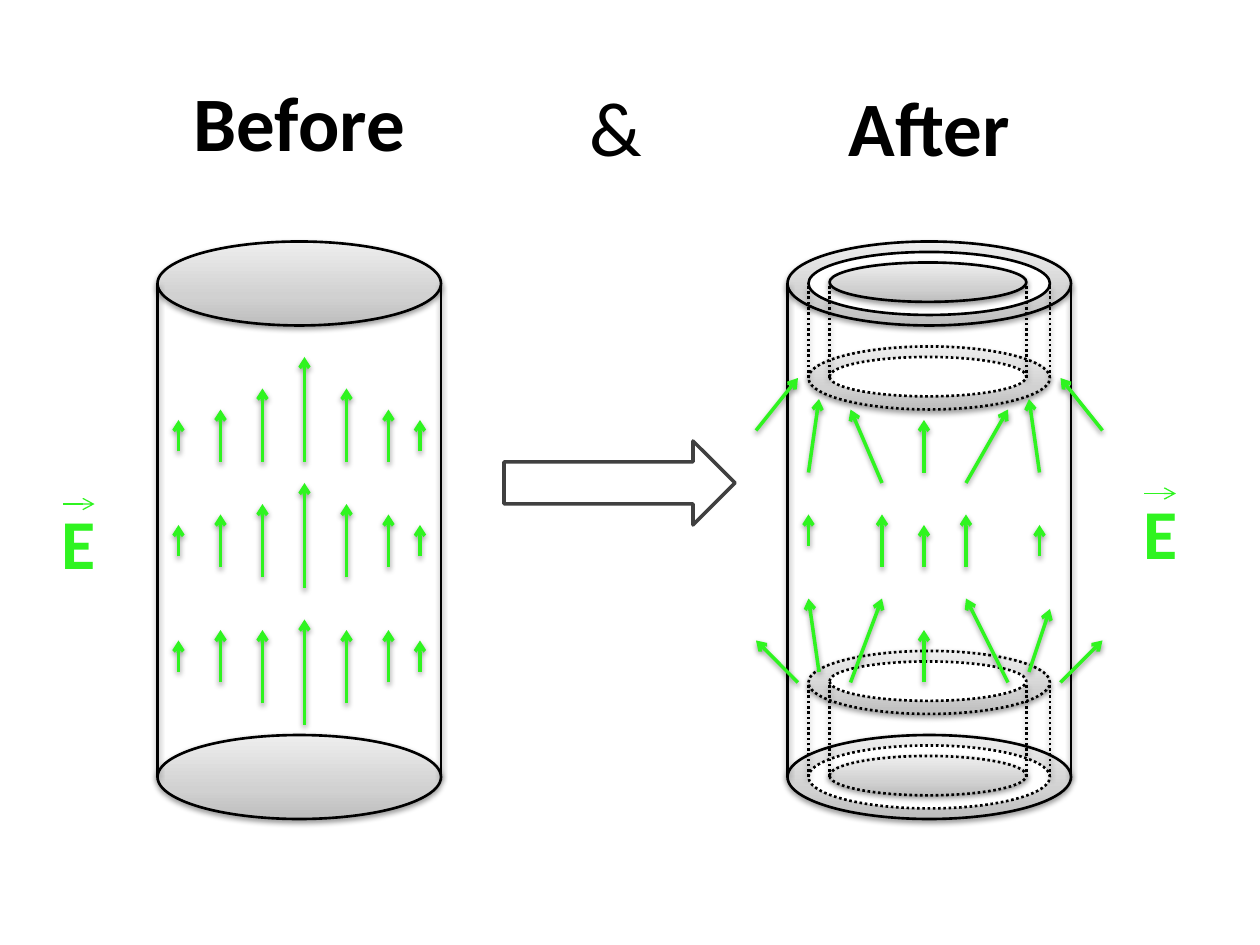
from lxml import etree
from pptx import Presentation
from pptx.dml.color import RGBColor
from pptx.enum import dml, shapes, text
from pptx.oxml.ns import qn
from pptx.util import Pt

BLACK, WHITE, GREEN, GREY = "000000", "FFFFFF", "2FF420", "404040"
METAL = ((0, "BDBDBD"), (35000, "D1D1D1"), (100000, "EEEEEE"))
CAP_HEIGHT = 48


def rgb(value):
    """Turn a hex string into a colour."""
    return RGBColor.from_string(value)


def set_effect(item, shadow):
    """Give an item a soft shadow below it, or no effect at all."""
    effects = etree.SubElement(item._element.spPr, qn("a:effectLst"))
    if shadow:
        cast = etree.SubElement(effects, qn("a:outerShdw"), blurRad="40000",
                                dist="20000", dir="5400000", rotWithShape="0")
        tint = etree.SubElement(cast, qn("a:srgbClr"), val=BLACK)
        etree.SubElement(tint, qn("a:alpha"), val="38000")


def set_line(item, color, width, dotted=False):
    """Set the stroke of a shape or connector."""
    item.line.color.rgb = rgb(color)
    item.line.width = Pt(width)
    if dotted:
        item.line.dash_style = dml.MSO_LINE.ROUND_DOT


def add_line(slide, start, end, color=BLACK, width=1.5, dotted=False,
             arrow=False, shadow=True):
    """Draw a straight line, with an arrowhead at its end if asked."""
    line = slide.shapes.add_connector(
        shapes.MSO_CONNECTOR.STRAIGHT, *(Pt(v) for v in (*start, *end)))
    set_line(line, color, width, dotted)
    if arrow:
        etree.SubElement(line.line._get_or_add_ln(), qn("a:tailEnd"), type="arrow")
    set_effect(line, shadow)


def add_ellipse(slide, box, metal=True, dotted=False):
    """Draw an ellipse of shaded metal or of plain white."""
    ellipse = slide.shapes.add_shape(shapes.MSO_SHAPE.OVAL, *(Pt(v) for v in box))
    if metal:
        ellipse.fill.gradient()
        ellipse.fill.gradient_angle = 90
        stops = ellipse._element.spPr.find(qn("a:gradFill")).find(qn("a:gsLst"))
        for stop in list(stops):
            stops.remove(stop)
        for position, color in METAL:
            stop = etree.SubElement(stops, qn("a:gs"), pos=str(position))
            etree.SubElement(stop, qn("a:srgbClr"), val=color)
    else:
        ellipse.fill.solid()
        ellipse.fill.fore_color.rgb = rgb(WHITE)
    set_line(ellipse, BLACK, 1.5, dotted)
    set_effect(ellipse, shadow=metal)


def add_label(slide, box, words, size=44, color=BLACK, bold=True, middle=False,
              align=text.PP_ALIGN.CENTER):
    """Place one line of text in a box."""
    frame = slide.shapes.add_textbox(*(Pt(v) for v in box)).text_frame
    frame.word_wrap = True
    frame.vertical_anchor = text.MSO_ANCHOR.MIDDLE if middle else text.MSO_ANCHOR.TOP
    paragraph = frame.paragraphs[0]
    paragraph.text = words
    paragraph.alignment = align
    font = paragraph.font
    font.name, font.size, font.bold = "Calibri", Pt(size), bold
    font.color.rgb = rgb(color)


def add_cylinder(slide, left, top, width, height):
    """Draw the two caps and the two sides of a cylinder."""
    for cap_top in (top, top + height - CAP_HEIGHT):
        add_ellipse(slide, (left, cap_top, width, CAP_HEIGHT))
    for x in (left, left + width):
        add_line(slide, (x, top + CAP_HEIGHT / 2), (x, top + height - CAP_HEIGHT / 2))


def add_groove(slide, left, top, rings):
    """Draw a ring-shaped groove from (offset, metal outside, dotted) rings."""
    for offset, metal, dotted in rings:
        add_ellipse(slide, (left + 12, top + offset, 138, 36), metal, dotted)
        add_ellipse(slide, (left + 24, top + offset + 6, 112.5, 22.5), not metal, dotted)
    upper, lower = (top + offset + 18 for offset, _, _ in rings)
    for x in (12, 150, 24, 136.5):
        add_line(slide, (left + x, lower), (left + x, upper), dotted=True)


def add_field(slide, left, top, arrows):
    """Draw field arrows, each given as x and y of its tail and its tip."""
    for x1, y1, x2, y2 in arrows:
        add_line(slide, (left + x1, top + y1), (left + x2, top + y2),
                 GREEN, 2, arrow=True)


def add_before(slide, left, top, width, height):
    """Draw the solid cylinder and its parallel field."""
    add_cylinder(slide, left, top, width, height)
    columns = (12, 36, 60, 84, 108, 132, 150)
    lengths = (18, 30, 42, 60)
    rows = ((120, 126, 126, 126), (180, 186, 192, 198), (246, 252, 264, 276))
    add_field(slide, left, top, [
        (x, tails[rank], x, tails[rank] - lengths[rank])
        for tails in rows
        for x, rank in zip(columns, (0, 1, 2, 3, 2, 1, 0))])


def add_after(slide, left, top, width, height):
    """Draw the grooved cylinder and its bent field."""
    add_cylinder(slide, left, top, width, height)
    add_groove(slide, left, top, ((6, False, False), (60, True, True)))
    add_groove(slide, left, top, ((234, True, True), (288, False, True)))
    upper = ((-18, 108, 6, 78), (12, 132, 18, 90), (54, 138, 36, 96),
             (78, 132, 78, 102), (102, 138, 126, 96), (144, 132, 138, 90),
             (180, 108, 156, 78))
    central = ((12, 174, 12, 156), (54, 186, 54, 156), (78, 186, 78, 162),
               (102, 186, 102, 156), (144, 180, 144, 162))
    lower = ((6, 252, -18, 228), (18, 246, 12, 204), (36, 252, 54, 204),
             (78, 252, 78, 222), (126, 252, 102, 204), (138, 246, 150, 210),
             (156, 252, 180, 228))
    add_field(slide, left, top, upper + central + lower)


def add_vector(slide, left, top, width, height):
    """Write the letter E under its vector arrow."""
    add_label(slide, (left, top, width, height), "E", 40, GREEN)
    add_line(slide, (left + 12, top + 6), (left + 30, top + 6), GREEN, 0.75,
             arrow=True, shadow=False)


def add_step(slide, *box):
    """Draw the block arrow that leads from before to after."""
    step = slide.shapes.add_shape(shapes.MSO_SHAPE.RIGHT_ARROW, *(Pt(v) for v in box))
    step.fill.solid()
    step.fill.fore_color.rgb = rgb(WHITE)
    set_line(step, GREY, 2)
    step.shadow.inherit = False


def add_heading(slide):
    """Write the heading over the two cylinders."""
    add_label(slide, (36, 24, 270, 90), "Before", middle=True)
    add_label(slide, (330, 42, 66, 60.5), "&", bold=False, align=text.PP_ALIGN.LEFT)
    add_label(slide, (396, 30, 270, 84), "After", middle=True)


def main():
    """Build the slide and save it."""
    deck = Presentation()
    deck.slide_width, deck.slide_height = Pt(720), Pt(540)
    slide = deck.slides.add_slide(deck.slide_layouts[6])
    add_heading(slide)
    add_before(slide, 90, 138, 162, 330)
    add_step(slide, 288, 252, 132, 48)
    add_after(slide, 450, 138, 162, 330)
    add_vector(slide, 24, 282, 42, 55.5)
    add_vector(slide, 642, 276, 42, 55.5)
    deck.save("out.pptx")


if __name__ == "__main__":
    main()
